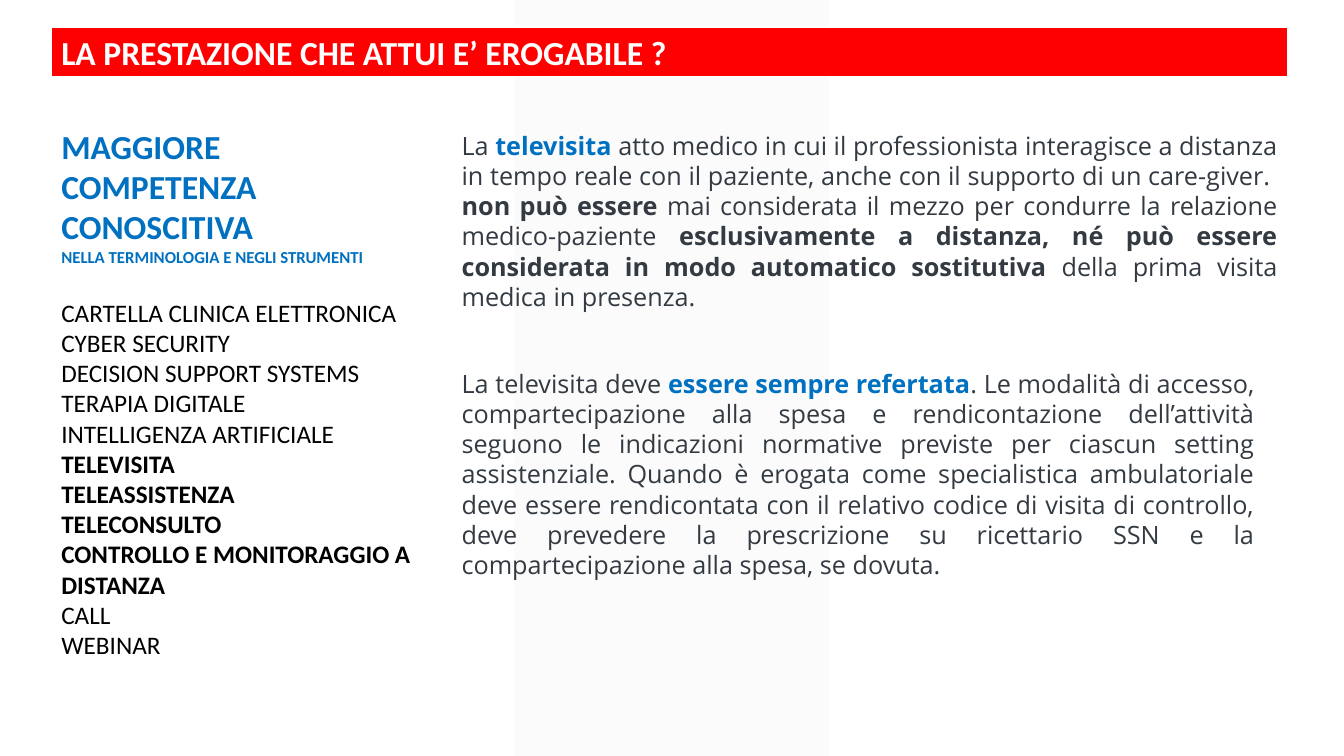
from pptx import Presentation
from pptx.dml.color import RGBColor
from pptx.enum.shapes import MSO_SHAPE
from pptx.enum.text import MSO_ANCHOR, PP_ALIGN
from pptx.oxml.ns import qn
from pptx.util import Inches, Pt
from lxml import etree

COLORS = {"white": "FFFFFF", "red": "FF0000", "blue": "0070C0",
          "black": "000000", "slate": "333A42", "band": "F2F2F2"}

TITLE = "LA PRESTAZIONE CHE ATTUI E’ EROGABILE ?"
# text, size, colour, bold
HEADINGS = [
    ("MAGGIORE COMPETENZA CONOSCITIVA", 24, "blue", True),
    ("NELLA TERMINOLOGIA E NEGLI STRUMENTI", 12, "blue", True),
]
# text, bold
TOPICS = [
    ("CARTELLA CLINICA ELETTRONICA", False),
    ("CYBER SECURITY", False),
    ("DECISION SUPPORT SYSTEMS", False),
    ("TERAPIA DIGITALE", False),
    ("INTELLIGENZA ARTIFICIALE", False),
    ("TELEVISITA", True),
    ("TELEASSISTENZA", True),
    ("TELECONSULTO", True),
    ("CONTROLLO E MONITORAGGIO A DISTANZA", True),
    ("CALL", False),
    ("WEBINAR", False),
]
# runs: text, colour, bold
DEFINITION = [
    ("La ", "slate", False),
    ("televisita ", "blue", True),
    ("atto medico in cui il professionista interagisce a distanza in tempo reale "
     "con il paziente, anche con il supporto di un care-giver.  ", "slate", False),
    ("non può essere", "slate", True),
    (" mai considerata il mezzo per condurre la relazione medico-paziente ",
     "slate", False),
    ("esclusivamente a distanza, né può essere considerata in modo automatico "
     "sostitutiva", "slate", True),
    (" della prima visita medica in presenza.", "slate", False),
]
REPORTING = [
    ("La televisita deve ", "slate", False),
    ("essere sempre refertata", "blue", True),
    (". Le modalità di accesso, compartecipazione alla spesa e rendicontazione "
     "dell’attività seguono le indicazioni normative previste per ciascun setting "
     "assistenziale. Quando è erogata come specialistica ambulatoriale deve essere "
     "rendicontata con il relativo codice di visita di controllo, deve prevedere la "
     "prescrizione su ricettario SSN e la compartecipazione alla spesa, se dovuta.",
     "slate", False),
]
LEFT, TOP = 0.51, 0.94
TEXT_LEFT = 4.48
LINE = 0.3  # height of one 18 pt line
INSET = 0.05


def rgb(name):
    return RGBColor.from_string(COLORS[name])


def style(font, name, size, color, bold):
    font.name, font.size, font.bold = name, Pt(size), bold
    font.color.rgb = rgb(color)


def add_panel(slide, box, fill=None, line="white", preset=MSO_SHAPE.RECTANGLE):
    panel = slide.shapes.add_shape(preset, *map(Inches, box))
    panel.shadow.inherit = False
    if fill:
        panel.fill.solid()
        panel.fill.fore_color.rgb = rgb(fill)
    else:
        panel.fill.background()
    if line:
        panel.line.color.rgb = rgb(line)
        panel.line.width = Pt(1.25)
    else:
        panel.line.fill.background()
    panel.text_frame.word_wrap = True
    panel.text_frame.vertical_anchor = MSO_ANCHOR.MIDDLE
    return panel


def add_lines(frame, lines):
    """Write (text, size, colour, bold, alignment, space before) as paragraphs."""
    for i, (text, size, color, bold, align, gap) in enumerate(lines):
        line = frame.add_paragraph() if i else frame.paragraphs[0]
        line.text = text
        line.alignment = align
        if gap:
            line.space_before = Pt(gap)
        style(line.font, "Calibri", size, color, bold)


def add_passage(slide, box, runs, top_inset=INSET):
    frame = slide.shapes.add_textbox(*map(Inches, box)).text_frame
    frame.word_wrap = True
    frame.margin_top = Inches(top_inset)
    passage = frame.paragraphs[0]
    passage.alignment = PP_ALIGN.JUSTIFY
    for text, color, bold in runs:
        run = passage.add_run()
        run.text = text
        style(run.font, "Open Sans", 18, color, bold)


def main():
    prs = Presentation()
    prs.slide_width, prs.slide_height = Inches(13.33), Inches(7.5)
    slide = prs.slides.add_slide(prs.slide_layouts[6])

    band = add_panel(slide, (5.1, 0, 3.12, 7.5), "band", None, MSO_SHAPE.PARALLELOGRAM)
    band.adjustments[0] = 0
    band_color = band.fill._xPr.find(qn("a:solidFill"))[0]
    etree.SubElement(band_color, qn("a:alpha"), val="30000")

    banner = add_panel(slide, (LEFT, 0.27, 12.26, 0.49), "red")
    add_lines(banner.text_frame, [(TITLE, 24, "white", True, PP_ALIGN.LEFT, 0)])

    glossary = add_panel(slide, (LEFT, TOP, 3.76, 6.21)).text_frame
    glossary.margin_bottom = Inches(INSET + LINE)
    headings = [(*heading, PP_ALIGN.JUSTIFY, 0) for heading in HEADINGS]
    topics = [(text, 18, "black", bold, PP_ALIGN.LEFT, 0 if i else LINE * 72)
              for i, (text, bold) in enumerate(TOPICS)]
    add_lines(glossary, headings + topics)

    add_passage(slide, (TEXT_LEFT, TOP, 8.29, 1.92), DEFINITION, INSET + LINE)
    add_passage(slide, (TEXT_LEFT, 3.6, 8.06, 2.22), REPORTING)
    prs.save("out.pptx")


if __name__ == "__main__":
    main()
